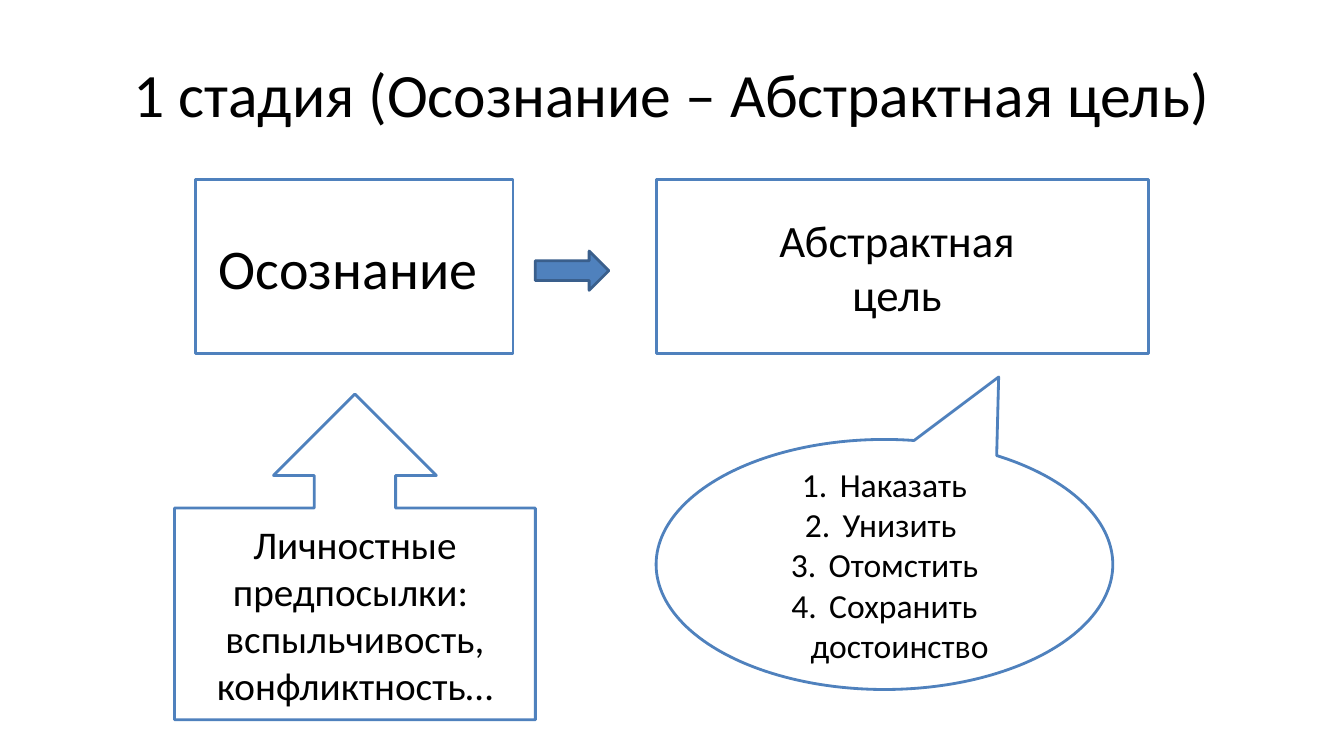
from lxml.etree import SubElement
from pptx import Presentation
from pptx.dml.color import RGBColor
from pptx.enum.shapes import MSO_SHAPE as SHAPE
from pptx.enum.text import MSO_ANCHOR as ANCHOR, PP_ALIGN as ALIGN
from pptx.oxml.ns import qn
from pptx.util import Pt

BLACK = RGBColor(0x00, 0x00, 0x00)
WHITE = RGBColor(0xFF, 0xFF, 0xFF)
BLUE = RGBColor(0x4F, 0x81, 0xBD)
DARK_BLUE = RGBColor(0x3A, 0x5F, 0x8C)

FONT = "Calibri"
LEFT_X, RIGHT_X = 139.7, 468.7
BOX_TOP, BOX_HEIGHT = 128.2, 124.6
LIST_INDENT = 27


def write(sp, lines, size):
    tf = sp.text_frame
    tf.word_wrap = True
    tf.vertical_anchor = ANCHOR.MIDDLE
    tf.text = "\n".join(lines)
    for p in tf.paragraphs:
        p.alignment = ALIGN.CENTER
        p.font.name = FONT
        p.font.size = Pt(size)
        p.font.color.rgb = BLACK


def number(sp):
    for p in sp.text_frame.paragraphs:
        props = p._p.get_or_add_pPr()
        props.set("marL", str(Pt(LIST_INDENT)))
        props.set("indent", str(Pt(-LIST_INDENT)))
        bullet = SubElement(props, qn("a:buAutoNum"), type="arabicPeriod")
        props.remove(bullet)
        props.find(qn("a:defRPr")).addprevious(bullet)


def add_title(s, text):
    sp = s.shapes.add_textbox(Pt(48), Pt(21.6), Pt(864), Pt(90))
    write(sp, [text], 44)


def add_block(s, kind, x, y, w, h, fill=WHITE, line=BLUE):
    sp = s.shapes.add_shape(kind, Pt(x), Pt(y), Pt(w), Pt(h))
    sp.shadow.inherit = False
    sp.fill.solid()
    sp.fill.fore_color.rgb = fill
    sp.line.color.rgb = line
    sp.line.width = Pt(2)
    return sp


def main():
    prs = Presentation()
    prs.slide_width, prs.slide_height = Pt(960), Pt(540)
    s = prs.slides.add_slide(prs.slide_layouts[6])

    add_title(s, "1 стадия (Осознание – Абстрактная цель)")

    awareness = add_block(s, SHAPE.RECTANGLE, LEFT_X, BOX_TOP, 226.8, BOX_HEIGHT)
    write(awareness, ["Осознание "], 40)

    causes = add_block(s, SHAPE.UP_ARROW_CALLOUT, 124.6, 281.5, 257.8, 232.6)
    write(causes, ["Личностные предпосылки: ", "вспыльчивость, конфликтность…"], 28)

    add_block(s, SHAPE.RIGHT_ARROW, 382.3, 179.3, 52.6, 28.1, BLUE, DARK_BLUE)

    goal = add_block(s, SHAPE.RECTANGLE, RIGHT_X, BOX_TOP, 351.4, BOX_HEIGHT)
    write(goal, ["Абстрактная ", "цель "], 32)

    examples = add_block(s, SHAPE.OVAL_CALLOUT, RIGHT_X, 313.9, 326.2, 178.6)
    examples.adjustments[0] = 0.25
    examples.adjustments[1] = -0.75
    write(examples, ["Наказать", "Унизить ", "Отомстить", "Сохранить достоинство "], 24)
    number(examples)

    prs.save("out.pptx")


if __name__ == "__main__":
    main()
